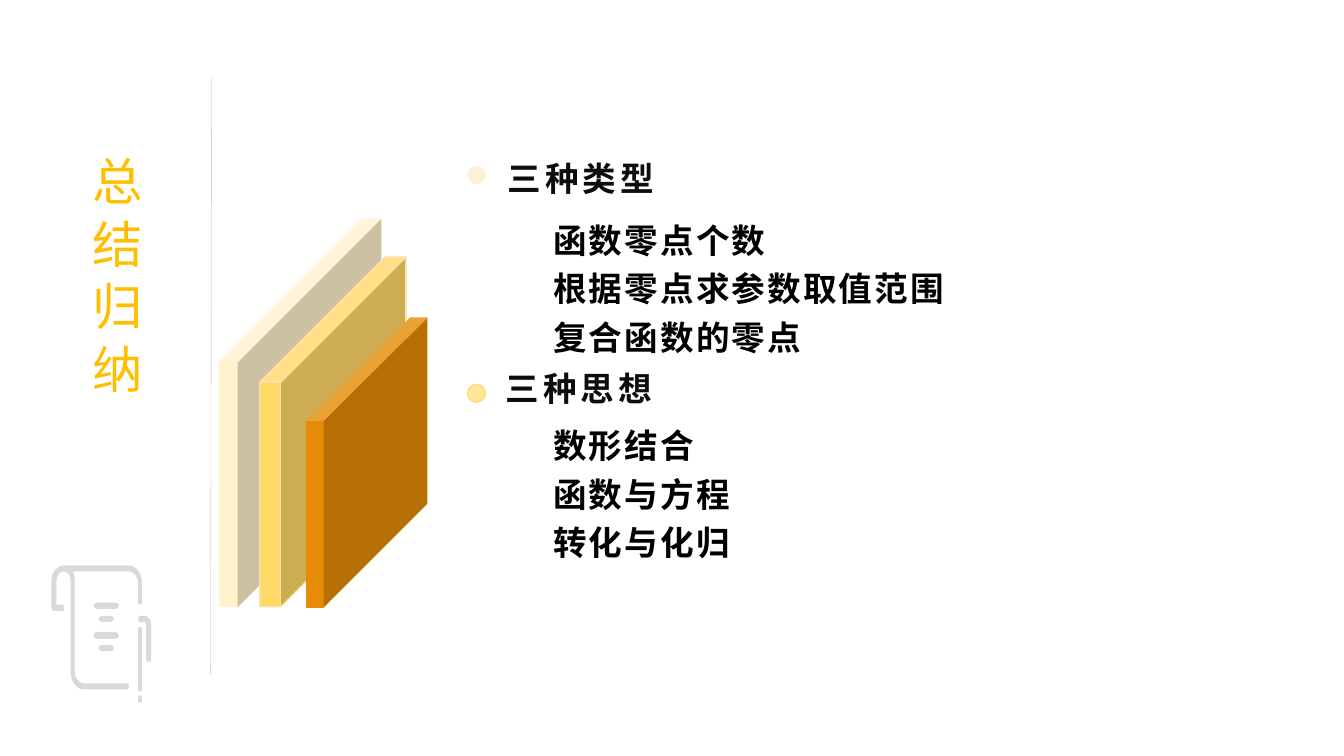
from dataclasses import dataclass

from lxml.etree import SubElement
from pptx import Presentation
from pptx.dml.color import RGBColor
from pptx.enum.shapes import MSO_CONNECTOR, MSO_SHAPE as Preset
from pptx.enum.text import MSO_ANCHOR as Anchor, MSO_AUTO_SIZE as AutoSize, PP_ALIGN as Align
from pptx.oxml.ns import qn
from pptx.util import Cm, Pt


@dataclass(frozen=True)
class Theme:
    title: str = "FFBF00"
    heading: str = "0D0D0D"
    outline: str = "FEEFD9"
    body: str = "000000"
    divider: str = "BFBFBF"
    icon: str = "D9D9D9"
    title_size: int = 36
    text_size: int = 24
    latin: str = "Arial"
    cjk: str = "Noto Sans CJK SC"


@dataclass(frozen=True)
class Box:
    left: float
    top: float
    width: float
    height: float

    def emu(self) -> tuple:
        return Cm(self.left), Cm(self.top), Cm(self.width), Cm(self.height)


@dataclass(frozen=True)
class Solid:
    preset: Preset
    box: Box
    fill: str
    line: str = ""
    line_pt: float = 0
    depth: float = 0


@dataclass(frozen=True)
class Section:
    heading: str
    heading_box: Box
    items: tuple
    items_box: Box


THEME = Theme()
DOT = 0.46

SOLIDS = (
    Solid(Preset.CUBE, Box(5.51, 5.51, 4.1, 9.79), "FFF2CC", depth=0.883),
    Solid(Preset.CUBE, Box(6.55, 6.48, 3.68, 8.81), "FFD966", "FDDFB2", 1, 0.857),
    Solid(Preset.CUBE, Box(7.72, 8, 3.05, 7.31), "E58B06", depth=0.857),
    Solid(Preset.OVAL, Box(11.78, 4.18, DOT, DOT), "FEEFD9"),
    Solid(Preset.OVAL, Box(11.78, 9.68, DOT, DOT), "FFE599", "FFD966", 0.75),
)

SECTIONS = (
    Section("三种类型", Box(12.53, 3.82, 15.42, 1.17),
            ("函数零点个数", "根据零点求参数取值范围", "复合函数的零点"),
            Box(13.69, 5.34, 18.44, 3.78)),
    Section("三种思想", Box(12.48, 9.12, 15.42, 1.17),
            ("数形结合", "函数与方程", "转化与化归"),
            Box(13.69, 10.51, 18.08, 4.52)),
)

# Scroll icon in units of 0.0254 cm: a pair is a line end, six numbers a Bézier curve.
ICON_UNIT = 0.0254
GRAIN = 100
SHEET = (
    (137, 579), (137, 597), (137, 599, 138, 600, 139, 600), (140, 600, 141, 599, 141, 597),
    (141, 579), (141, 569, 135, 561, 128, 561), (63, 561), (57, 561, 51, 568, 51, 576),
    (51, 603), (51, 605, 52, 606, 54, 606), (62, 606), (63, 606, 64, 605, 64, 603),
    (64, 601, 63, 600, 62, 600), (56, 600), (56, 576), (56, 571, 59, 567, 63, 567),
    (67, 567, 70, 571, 70, 576), (70, 666), (70, 676, 76, 684, 83, 684), (126, 684),
    (127, 684, 128, 682, 128, 681), (128, 679, 127, 678, 126, 678), (83, 678),
    (78, 678, 74, 672, 74, 666), (74, 576), (74, 573, 74, 569, 72, 567), (128, 567),
    (133, 567, 137, 572, 137, 579),
)
PEN_CLIP = (
    (143, 611), (139, 611), (138, 611, 137, 613, 137, 614), (137, 616, 138, 617, 139, 617),
    (143, 617), (144, 617, 145, 618, 145, 620), (145, 654), (145, 656, 146, 657, 147, 657),
    (149, 657, 150, 656, 150, 654), (150, 620), (150, 615, 147, 611, 143, 611),
)
# Left, top, right, bottom of the text lines, then of the pen and its tip.
BARS = (
    (93, 598, 118, 604), (98, 611, 113, 617), (93, 627, 118, 634), (98, 640, 113, 646),
    (137, 622, 141, 686), (137, 690, 141, 697),
)


def rgb(code: str) -> RGBColor:
    return RGBColor.from_string(code)


def pill(x0: float, y0: float, x1: float, y1: float) -> tuple:
    """Contour of a bar with rounded ends."""
    r = min(x1 - x0, y1 - y0) / 2
    k = r * 0.45
    contour = (
        (x0 + r, y0), (x1 - r, y0), (x1 - k, y0, x1, y0 + k, x1, y0 + r),
        (x1, y1 - r), (x1, y1 - k, x1 - k, y1, x1 - r, y1),
        (x0 + r, y1), (x0 + k, y1, x0, y1 - k, x0, y1 - r),
        (x0, y0 + r), (x0, y0 + k, x0 + k, y0, x0 + r, y0),
    )
    moves = [seg for last, seg in zip(contour, contour[1:]) if seg != last[-2:]]
    return contour[0], *moves


def grid_points(seg: tuple) -> list:
    return [(x * GRAIN, y * GRAIN) for x, y in zip(seg[::2], seg[1::2])]


def bend_curves(sp, contours: list) -> None:
    """Join the three points of each curve, drawn as lines so far, into one Bézier."""
    lines = sp._element.iter(qn("a:lnTo"))
    segments = [seg for contour in contours for seg in contour[1:]]
    lines = iter(list(lines))
    for seg in segments:
        first, *rest = [next(lines) for _ in range(len(seg) // 2)]
        if rest:
            curve = first.makeelement(qn("a:cubicBezTo"))
            first.addprevious(curve)
            for line in (first, *rest):
                curve.append(line[0])
                line.getparent().remove(line)


def add_icon(s) -> None:
    contours = [SHEET, PEN_CLIP, *(pill(*bar) for bar in BARS)]
    start = grid_points(SHEET[0])[0]
    builder = s.shapes.build_freeform(*start, scale=Cm(ICON_UNIT) / GRAIN)
    for i, (first, *segments) in enumerate(contours):
        if i:
            builder.move_to(*grid_points(first)[0])
        builder.add_line_segments([pt for seg in segments for pt in grid_points(seg)], close=True)
    sp = builder.convert_to_shape()
    bend_curves(sp, contours)
    sp.shadow.inherit = False
    sp.fill.solid()
    sp.fill.fore_color.rgb = rgb(THEME.icon)
    sp.line.fill.background()


def add_solid(s, solid: Solid) -> None:
    sp = s.shapes.add_shape(solid.preset, *solid.box.emu())
    sp.shadow.inherit = False
    sp.fill.solid()
    sp.fill.fore_color.rgb = rgb(solid.fill)
    if solid.depth:
        sp.adjustments[0] = solid.depth
    if solid.line:
        sp.line.color.rgb = rgb(solid.line)
        sp.line.width = Pt(solid.line_pt)
    else:
        sp.line.fill.background()


def add_divider(s) -> None:
    line = s.shapes.add_connector(MSO_CONNECTOR.STRAIGHT, Cm(5.33), Cm(1.93), Cm(5.31), Cm(16.99))
    line.line.color.rgb = rgb(THEME.divider)
    line.line.width = Pt(0.25)
    SubElement(line._element.spPr, qn("a:effectLst"))


def fill_text(sp, box: Box, lines: tuple, size: int, color: str, latin: str, bold: bool = True,
              spacing: float = 0, leading: float = 1, anchor: Anchor = Anchor.TOP):
    """Move a placeholder, write one plain paragraph per line, and return its text frame."""
    sp.left, sp.top, sp.width, sp.height = box.emu()
    tf = sp.text_frame
    tf.auto_size, tf.word_wrap, tf.vertical_anchor = AutoSize.NONE, True, anchor
    for i, text in enumerate(lines):
        p = tf.add_paragraph() if i else tf.paragraphs[0]
        p.alignment, p.line_spacing, p.space_before = Align.LEFT, leading, Pt(0)
        pPr = p._p.get_or_add_pPr()
        pPr.set("marL", "0")
        pPr.set("indent", "0")
        SubElement(pPr, qn("a:buNone"))
        r = p.add_run()
        r.text = text
        r.font.size, r.font.bold, r.font.name = Pt(size), bold, latin
        r.font.color.rgb = rgb(color)
        rPr = r._r.get_or_add_rPr()
        rPr.set("spc", str(round(spacing * 100)))
        SubElement(rPr, qn("a:ea"), typeface=THEME.cjk)
    return tf


def add_title(sp) -> None:
    tf = fill_text(sp, Box(1.88, 3.81, 2.06, 6.4), ("总 结 归 纳",), THEME.title_size,
                   THEME.title, THEME.latin, bold=False)
    tf.word_wrap, tf.auto_size = False, AutoSize.SHAPE_TO_FIT_TEXT
    tf._txBody.bodyPr.set("vert", "eaVert")


def add_section(heading_sp, items_sp, section: Section) -> None:
    tf = fill_text(heading_sp, section.heading_box, (section.heading,), THEME.text_size,
                   THEME.heading, THEME.latin, spacing=3, leading=1.3, anchor=Anchor.BOTTOM)
    tf.margin_bottom = 0
    rPr = tf.paragraphs[0].runs[0]._r.get_or_add_rPr()
    ln = SubElement(rPr, qn("a:ln"), w=str(Pt(0.75)))
    SubElement(SubElement(ln, qn("a:solidFill")), qn("a:srgbClr"), val=THEME.outline)
    rPr.insert(0, ln)
    tf = fill_text(items_sp, section.items_box, section.items, THEME.text_size,
                   THEME.body, THEME.cjk, spacing=1.5, leading=1.2)
    tf.margin_top = 0


def main() -> None:
    prs = Presentation()
    prs.slide_width, prs.slide_height = Cm(33.87), Cm(19.05)
    s = prs.slides.add_slide(prs.slide_layouts.get_by_name("Comparison"))
    title, *bodies = s.placeholders
    add_title(title)
    for heading_sp, items_sp, section in zip(bodies[::2], bodies[1::2], SECTIONS):
        add_section(heading_sp, items_sp, section)
    add_divider(s)
    add_icon(s)
    for solid in SOLIDS:
        add_solid(s, solid)
    prs.save("out.pptx")


if __name__ == "__main__":
    main()
